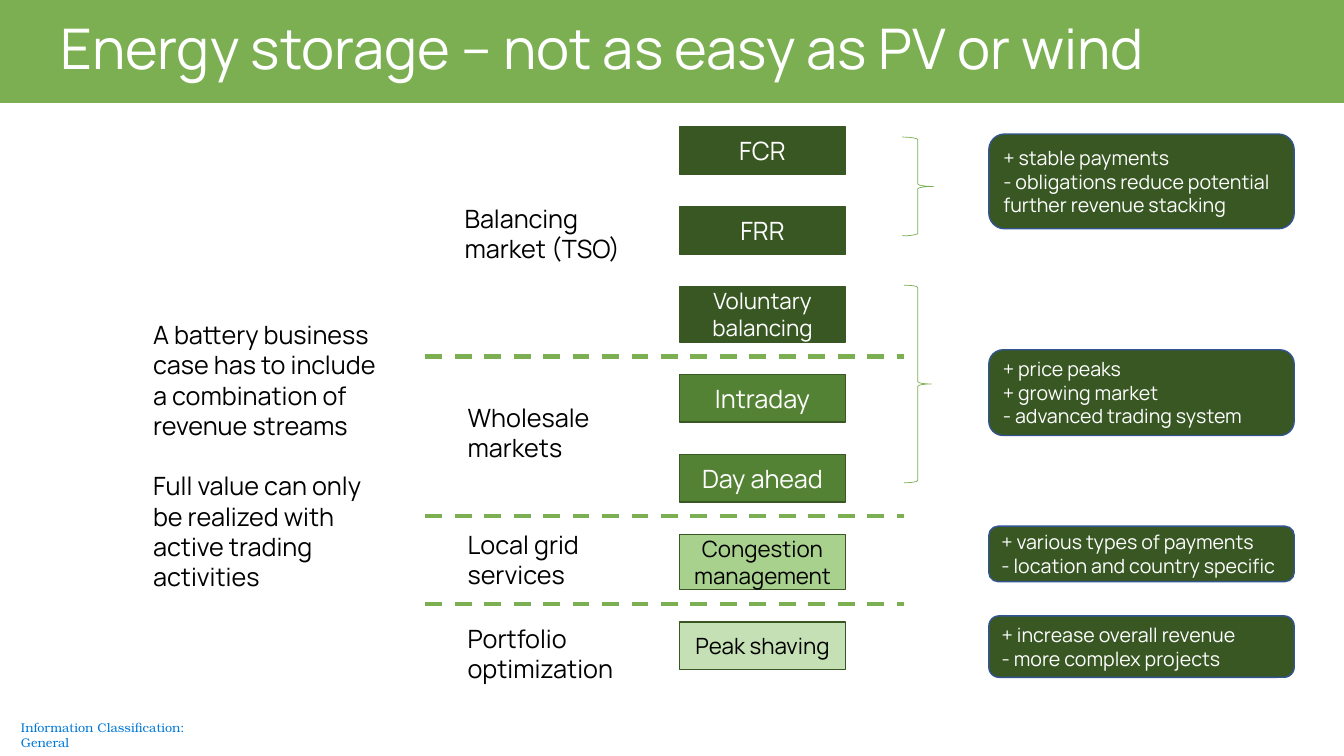
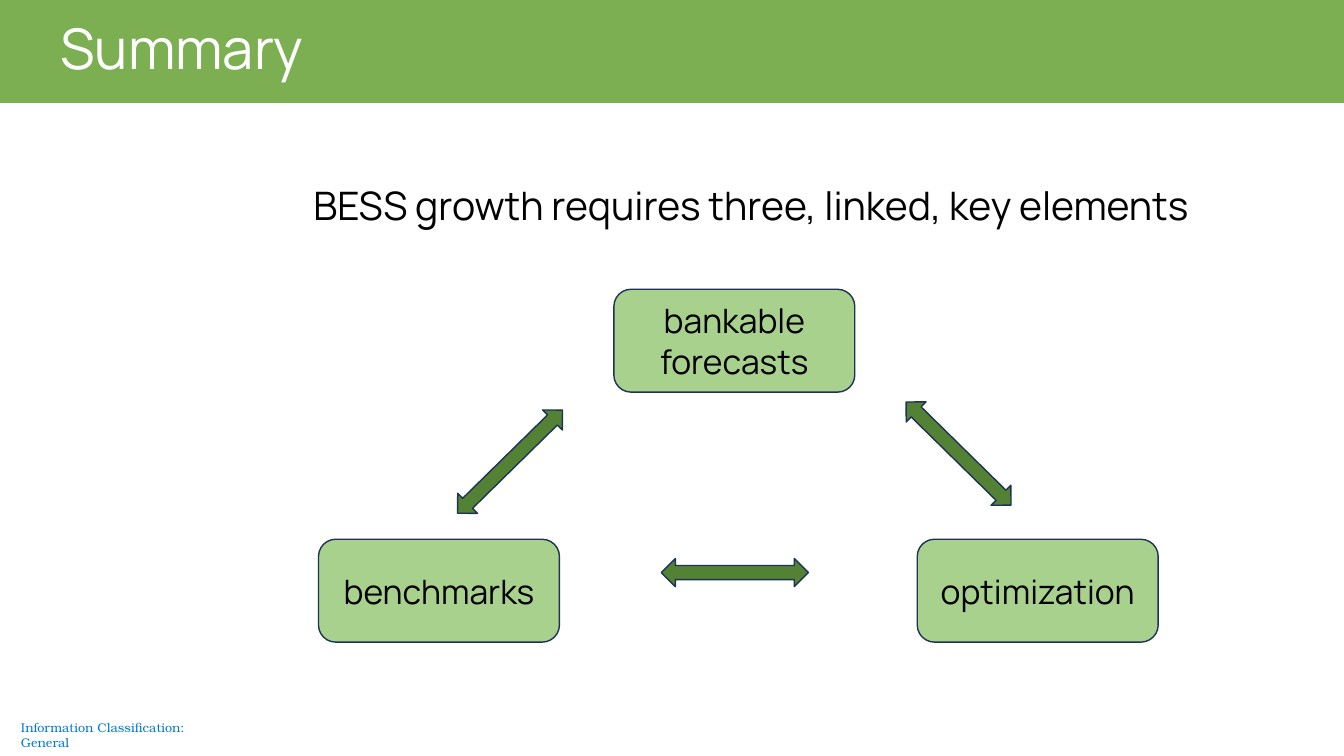
from lxml.etree import SubElement
from pptx import Presentation
from pptx.dml.color import RGBColor
from pptx.enum.dml import MSO_LINE
from pptx.enum.shapes import MSO_CONNECTOR, MSO_SHAPE
from pptx.enum.text import MSO_ANCHOR, PP_ALIGN
from pptx.oxml.ns import qn
from pptx.util import Inches, Pt

HUES = {
    "band": "7BAF52", "deep": "385723", "leaf": "548235",
    "light": "A9D18E", "pale": "C5E0B4", "navy": "1E3256",
    "edge": "325491", "link": "0078D7", "white": "FFFFFF", "black": "000000",
}
COLS, ROWS = 160, 90


class Deck:
    """Holds the style and the current slide; lengths are grid cells."""

    font = "Manrope"
    small = "TeX Gyre Bonum"
    head = 12.24

    def __init__(self):
        self.file = Presentation()
        self.file.slide_width = Inches(13.33)
        self.file.slide_height = Inches(7.5)
        self.cell = self.file.slide_width / COLS
        self.row = self.file.slide_height / ROWS
        self.slide = None

    def place(self, x, y, w, h):
        return (round(x * self.cell), round(y * self.row),
                round(w * self.cell), round(h * self.row))

    def hue(self, name):
        return RGBColor.from_string(HUES[name])

    def page(self, title):
        self.slide = self.file.slides.add_slide(self.file.slide_layouts[6])
        self.text((2.5, 85.7, 24.4, 1.8), ["Information Classification: General"],
                  9, "link", font=self.small, inset=0)
        self.shape(MSO_SHAPE.RECTANGLE, (0, 0, COLS, self.head), "band")
        self.text((6, 0, 150, self.head), [title], 40, "white",
                  anchor=MSO_ANCHOR.MIDDLE, lead=0.9)

    def put(self, frame, lines, size, hue, align=PP_ALIGN.LEFT,
            anchor=MSO_ANCHOR.TOP, font=None, lead=None, gap=0):
        frame.word_wrap = True
        frame.vertical_anchor = anchor
        for i, line in enumerate(lines):
            para = frame.add_paragraph() if i else frame.paragraphs[0]
            para.alignment = align
            if lead:
                para.line_spacing = lead
            if i and gap:
                para.space_before = Pt(gap)
            run = para.add_run()
            run.text = line
            run.font.name = font or self.font
            run.font.size = Pt(size)
            run.font.color.rgb = self.hue(hue)

    def text(self, area, lines, size, hue="black", inset=None, **style):
        frame = self.slide.shapes.add_textbox(*self.place(*area)).text_frame
        if inset is not None:
            frame.margin_left = frame.margin_right = Inches(inset)
            frame.margin_top = frame.margin_bottom = Inches(inset)
        self.put(frame, lines, size, hue, **style)

    def shape(self, kind, area, fill=None, edge=None, width=1, turn=0):
        item = self.slide.shapes.add_shape(kind, *self.place(*area))
        item.shadow.inherit = False
        item.rotation = turn
        if fill:
            item.fill.solid()
            item.fill.fore_color.rgb = self.hue(fill)
        else:
            item.fill.background()
        if edge:
            item.line.color.rgb = self.hue(edge)
            item.line.width = Pt(width)
        else:
            item.line.fill.background()
        return item

    def box(self, area, lines, size, fill, edge, hue, soft=False,
            align=PP_ALIGN.CENTER):
        kind = MSO_SHAPE.ROUNDED_RECTANGLE if soft else MSO_SHAPE.RECTANGLE
        item = self.shape(kind, area, fill, edge)
        self.put(item.text_frame, lines, size, hue, align, MSO_ANCHOR.MIDDLE)

    def brace(self, area):
        self.shape(MSO_SHAPE.RIGHT_BRACE, area, edge="band", width=0.5)

    def arrow(self, area, turn):
        self.shape(MSO_SHAPE.LEFT_RIGHT_ARROW, area, "leaf", "navy", turn=turn)

    def dash(self, left, right, y):
        x, top, span, _ = self.place(left, y, right - left, 0)
        line = self.slide.shapes.add_connector(
            MSO_CONNECTOR.STRAIGHT, x, top, x + span, top)
        line.line.color.rgb = self.hue("band")
        line.line.width = Pt(3)
        line.line.dash_style = MSO_LINE.DASH
        SubElement(line._element.spPr, qn("a:effectLst"))


def storage(deck):
    deck.page("Energy storage – not as easy as PV or wind")

    # Key message
    deck.text((17.04, 37.44, 30.72, 37.56),
              ["A battery business case has to include a combination of revenue streams",
               "Full value can only be realized with active trading activities"],
              18, gap=21.6)

    # Revenue stack with equal gaps; a dashed line opens each new group
    low, tall, gap = 5.64, 6.55, 3.88
    stack = [
        ("FCR", low, 18, "deep", "white", False),
        ("FRR", low, 18, "deep", "white", False),
        ("Voluntary balancing", tall, 16, "deep", "white", False),
        ("Intraday", low, 18, "leaf", "white", True),
        ("Day ahead", low, 18, "leaf", "white", False),
        ("Congestion management", tall, 16, "light", "black", True),
        ("Peak shaving", low, 16, "pale", "black", True),
    ]
    top = 15.12
    for name, high, size, fill, hue, opens in stack:
        deck.box((80.88, top, 19.8, high), [name], size, fill, "deep", hue)
        if opens:
            deck.dash(50.64, 107.6, top - 2.16)
        top += high + gap

    # Group names
    for x, y, name in [(54.12, 23.64, "Balancing market (TSO)"),
                       (54.48, 47.28, "Wholesale markets"),
                       (54.48, 62.4, "Local grid services"),
                       (54.48, 73.56, "Portfolio optimization")]:
        deck.text((x, y, 23.64, 8.52), [name], 18)

    # Braces
    deck.brace((107.4, 16.32, 3.72, 11.76))
    deck.brace((107.64, 33.96, 3.24, 23.52))

    # Pros and cons
    notes = [
        (15.96, 11.28, ["+ stable payments",
                        "- obligations reduce potential further revenue stacking"]),
        (41.64, 10.2, ["+ price peaks", "+ growing market",
                       "- advanced trading system"]),
        (62.64, 6.6, ["+ various types of payments",
                      "- location and country specific"]),
        (73.32, 7.32, ["+ increase overall revenue", "- more complex projects"]),
    ]
    for y, high, lines in notes:
        deck.box((117.72, y, 36.36, high), lines, 14, "deep", "edge", "white",
                 soft=True, align=PP_ALIGN.LEFT)


def summary(deck):
    deck.page("Summary")
    deck.text((36.12, 21, 117, 6.84),
              ["BESS growth requires three, linked, key elements"], 28)

    # Three elements
    for x, y, name in [(73.08, 34.44, "bankable forecasts"),
                       (37.92, 64.2, "benchmarks"),
                       (109.2, 64.2, "optimization")]:
        deck.box((x, y, 28.68, 12.24), [name], 24, "light", "navy", "black",
                 soft=True)

    # Links between them
    for x, y, turn in [(105.36, 52.32, 44.5), (51.96, 53.28, 315.5),
                       (78.72, 66.48, 0)]:
        deck.arrow((x, y, 17.52, 3.36), turn)


def main():
    deck = Deck()
    storage(deck)
    summary(deck)
    deck.file.save("out.pptx")


if __name__ == "__main__":
    main()
